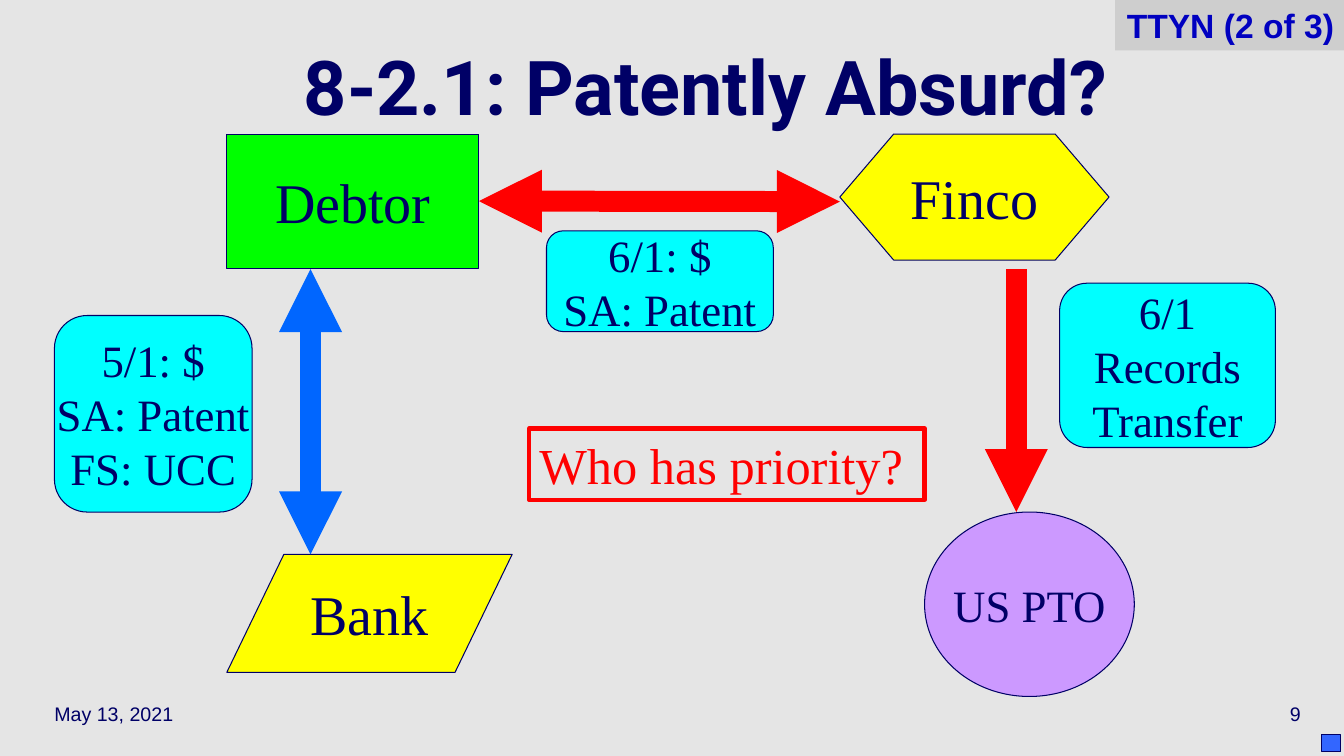
from lxml.etree import SubElement
from pptx import Presentation
from pptx.dml.color import RGBColor
from pptx.enum.shapes import MSO_CONNECTOR, MSO_SHAPE
from pptx.enum.text import MSO_ANCHOR, PP_ALIGN
from pptx.oxml.ns import qn
from pptx.util import Inches, Pt

NAVY, RED, YELLOW, CYAN = "000066", "FF0000", "FFFF00", "00FFFF"
SERIF = "Times New Roman"


def rgb(hex_color):
    return RGBColor.from_string(hex_color)


def write(shape, lines, size, font, color, align, bold=False):
    """Fill a shape with one paragraph per line, all in the same format."""
    text_frame = shape.text_frame
    text_frame.text = "\n".join(lines)
    text_frame.vertical_anchor = MSO_ANCHOR.MIDDLE
    for paragraph in text_frame.paragraphs:
        paragraph.alignment = align
        paragraph.font.size = Pt(size)
        paragraph.font.name = font
        paragraph.font.bold = bold
        paragraph.font.color.rgb = rgb(color)


presentation = Presentation()
presentation.slide_width = Inches(13.33)
presentation.slide_height = Inches(7.5)
slide = presentation.slides.add_slide(presentation.slide_layouts[5])
slide.background.fill.solid()
slide.background.fill.fore_color.rgb = rgb("E5E5E5")

# Title
title = slide.shapes.title
title.left, title.top = Inches(0.89), Inches(0.33)
title.width, title.height = Inches(12.22), Inches(1.25)
write(title, ["8‑2.1: Patently Absurd?"], 54, "Roboto", NAVY, PP_ALIGN.CENTER, True)
title.text_frame.paragraphs[0].line_spacing = 0.7

# Date and slide number
for left, text, align in [
    (0.44, "May 13, 2021", PP_ALIGN.LEFT),
    (10.22, "9", PP_ALIGN.RIGHT),
]:
    footer = slide.shapes.add_textbox(Inches(left), Inches(6.83), Inches(2.78), Inches(0.5))
    footer.text_frame.word_wrap = True
    write(footer, [text], 14, "Arial", NAVY, align)

# Parties, deals and the corner square
nodes = [
    (MSO_SHAPE.FLOWCHART_DATA, 2.25, 5.5, 2.83, 1.17, YELLOW, 40, ["Bank"]),
    (MSO_SHAPE.FLOWCHART_PROCESS, 2.25, 1.33, 2.5, 1.33, "00FF00", 40, ["Debtor"]),
    (MSO_SHAPE.FLOWCHART_PREPARATION, 8.33, 1.33, 2.67, 1.25, YELLOW, 40, ["Finco"]),
    (MSO_SHAPE.FLOWCHART_CONNECTOR, 9.17, 5.08, 2.08, 1.83, "CC99FF", 32, ["US PTO"]),
    (MSO_SHAPE.FLOWCHART_ALTERNATE_PROCESS, 0.54, 3.13, 1.96, 1.95, CYAN, 32,
     ["5/1: $", "SA: Patent", "FS: UCC"]),
    (MSO_SHAPE.FLOWCHART_ALTERNATE_PROCESS, 5.42, 2.29, 2.25, 1, CYAN, 32,
     ["6/1: $", "SA: Patent"]),
    (MSO_SHAPE.FLOWCHART_ALTERNATE_PROCESS, 10.51, 2.81, 2.14, 1.63, CYAN, 32,
     ["6/1", "Records", "Transfer"]),
    (MSO_SHAPE.RECTANGLE, 13.11, 7.29, 0.19, 0.17, "3366FF", 0, []),
]
parties = {}
for kind, left, top, width, height, fill, size, lines in nodes:
    node = slide.shapes.add_shape(
        kind, Inches(left), Inches(top), Inches(width), Inches(height))
    node.shadow.inherit = False
    node.fill.solid()
    node.fill.fore_color.rgb = rgb(fill)
    node.line.color.rgb = rgb(NAVY)
    node.line.width = Pt(0.75)
    if lines:
        write(node, lines, size, SERIF, NAVY, PP_ALIGN.CENTER)
        node.text_frame.word_wrap = False
        parties[lines[0]] = node

# Arrows between the parties
arrows = [
    (4.75, 2, 8.33, 2, RED, ["headEnd", "tailEnd"], "Debtor"),
    (3.08, 2.67, 3.08, 5.5, "0066FF", ["headEnd", "tailEnd"], None),
    (10.08, 2.67, 10.08, 5.08, RED, ["tailEnd"], None),
]
for x1, y1, x2, y2, color, ends, source in arrows:
    arrow = slide.shapes.add_connector(
        MSO_CONNECTOR.STRAIGHT, Inches(x1), Inches(y1), Inches(x2), Inches(y2))
    if source:
        arrow.begin_connect(parties[source], 3)
    arrow.line.color.rgb = rgb(color)
    arrow.line.width = Pt(15)
    for end in ends:
        SubElement(arrow.line._get_or_add_ln(), qn(f"a:{end}"), type="triangle")
    SubElement(arrow._element.spPr, qn("a:effectLst"))

# Question
question = slide.shapes.add_textbox(Inches(5.25), Inches(4.25), Inches(3.92), Inches(0.71))
question.line.color.rgb = rgb(RED)
question.line.width = Pt(3)
question.text_frame.word_wrap = True
write(question, ["Who has priority?"], 36, SERIF, RED, PP_ALIGN.LEFT)

# Corner tag
tag = slide.shapes.add_textbox(Inches(11.06), 0, Inches(2.27), Inches(0.5))
tag.fill.solid()
tag.fill.fore_color.rgb = rgb("CECECE")
tag.text_frame.word_wrap = True
write(tag, ["TTYN (2 of 3)"], 24, "Arial", "0000C0", PP_ALIGN.RIGHT, True)

presentation.save("out.pptx")
